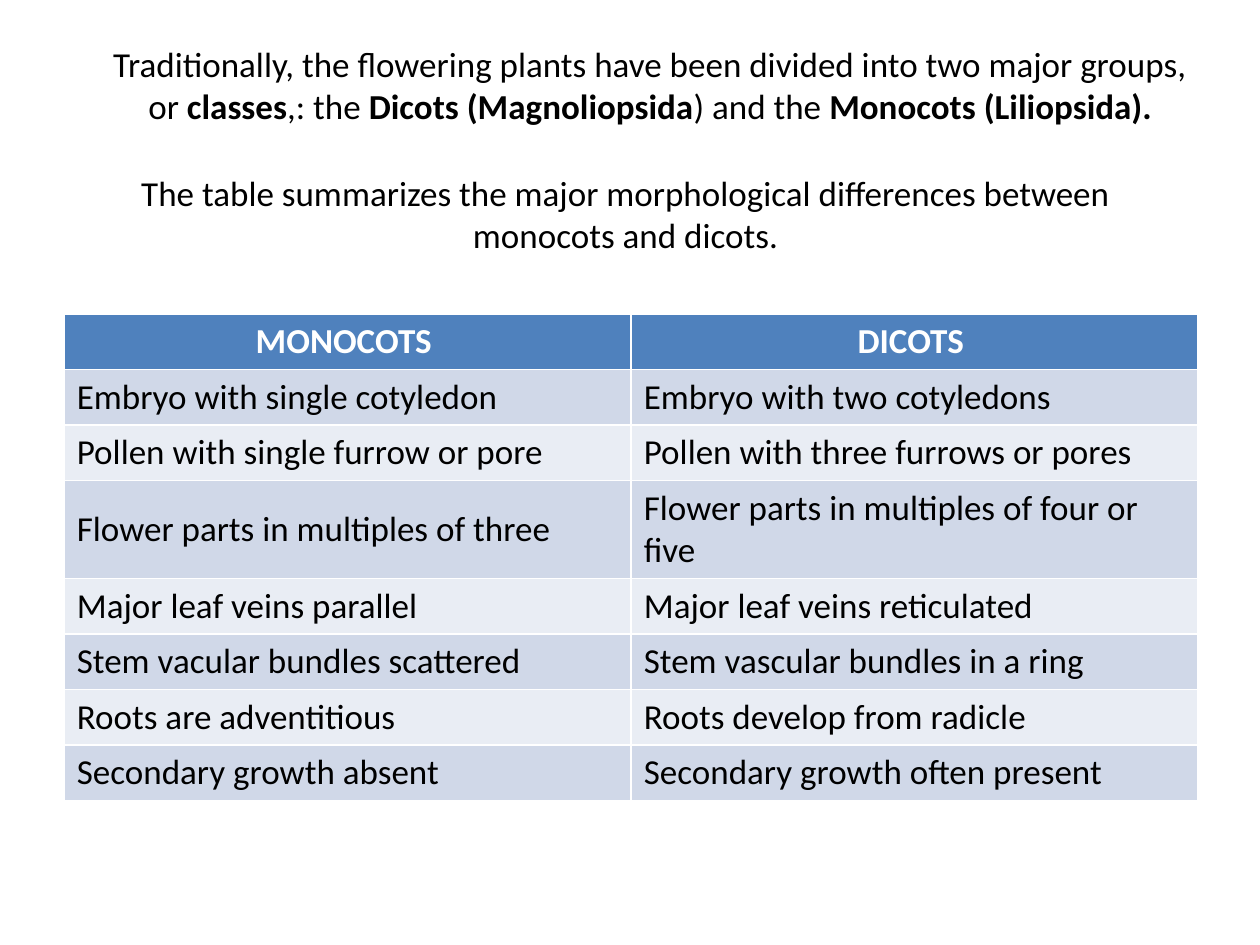
from dataclasses import dataclass

from pptx import Presentation
from pptx.dml.color import RGBColor
from pptx.enum.text import MSO_ANCHOR, PP_ALIGN
from pptx.util import Inches, Pt

CENTER, LEFT = PP_ALIGN.CENTER, PP_ALIGN.LEFT
MIDDLE = MSO_ANCHOR.MIDDLE


@dataclass(frozen=True)
class Theme:
    font: str = "Calibri"
    size: Pt = Pt(20)
    text: RGBColor = RGBColor(0, 0, 0)
    header_text: RGBColor = RGBColor(0xFF, 0xFF, 0xFF)
    header_fill: RGBColor = RGBColor(0x4F, 0x81, 0xBD)
    odd_fill: RGBColor = RGBColor(0xD0, 0xD8, 0xE8)
    even_fill: RGBColor = RGBColor(0xE9, 0xED, 0xF4)


THEME = Theme()


def add_run(paragraph, text, bold=False, color=THEME.text):
    run = paragraph.add_run()
    run.text = text
    run.font.name = THEME.font
    run.font.size = THEME.size
    run.font.bold = bold
    run.font.color.rgb = color


prs = Presentation()
prs.slide_width, prs.slide_height = Inches(10), Inches(7.5)
slide = prs.slides.add_slide(prs.slide_layouts[6])

# Comparison table
comparison = [
    ("MONOCOTS ", "DICOTS "),
    ("Embryo with single cotyledon", "Embryo with two cotyledons"),
    ("Pollen with single furrow or pore", "Pollen with three furrows or pores"),
    ("Flower parts in multiples of three", "Flower parts in multiples of four or five"),
    ("Major leaf veins parallel", "Major leaf veins reticulated"),
    ("Stem vacular bundles scattered", "Stem vascular bundles in a ring"),
    ("Roots are adventitious", "Roots develop from radicle"),
    ("Secondary growth absent", "Secondary growth often present"),
]
row_height = Inches(0.41)
table = slide.shapes.add_table(
    len(comparison), 2, Inches(0.51), Inches(2.49), Inches(9), row_height * len(comparison)
).table

for row, traits in enumerate(comparison):
    table.rows[row].height = row_height
    is_header = row == 0
    band_fill = THEME.odd_fill if row % 2 else THEME.even_fill
    for column, trait in enumerate(traits):
        cell = table.cell(row, column)
        cell.fill.solid()
        cell.fill.fore_color.rgb = THEME.header_fill if is_header else band_fill
        cell.vertical_anchor = MIDDLE
        paragraph = cell.text_frame.paragraphs[0]
        paragraph.alignment = CENTER if is_header else LEFT
        add_run(paragraph, trait, is_header, THEME.header_text if is_header else THEME.text)

# Introductory statements: left, top, width, then (text, bold) runs
statements = [
    (0.67, 0.29, 8.98, [
        ("Traditionally, the flowering plants have been divided into two major groups, or ", False),
        ("classes", True),
        (",: the ", False),
        ("Dicots (Magnoliopsida", True),
        (") and the ", False),
        ("Monocots (Liliopsida).", True),
    ]),
    (0.91, 1.31, 8.11, [
        ("The table summarizes the major morphological differences between "
         "monocots and dicots.", False),
    ]),
]
for left, top, width, runs in statements:
    statement = slide.shapes.add_textbox(Inches(left), Inches(top), Inches(width), Inches(0.77))
    statement.text_frame.word_wrap = True
    paragraph = statement.text_frame.paragraphs[0]
    paragraph.alignment = CENTER
    for text, bold in runs:
        add_run(paragraph, text, bold)

prs.save("out.pptx")
